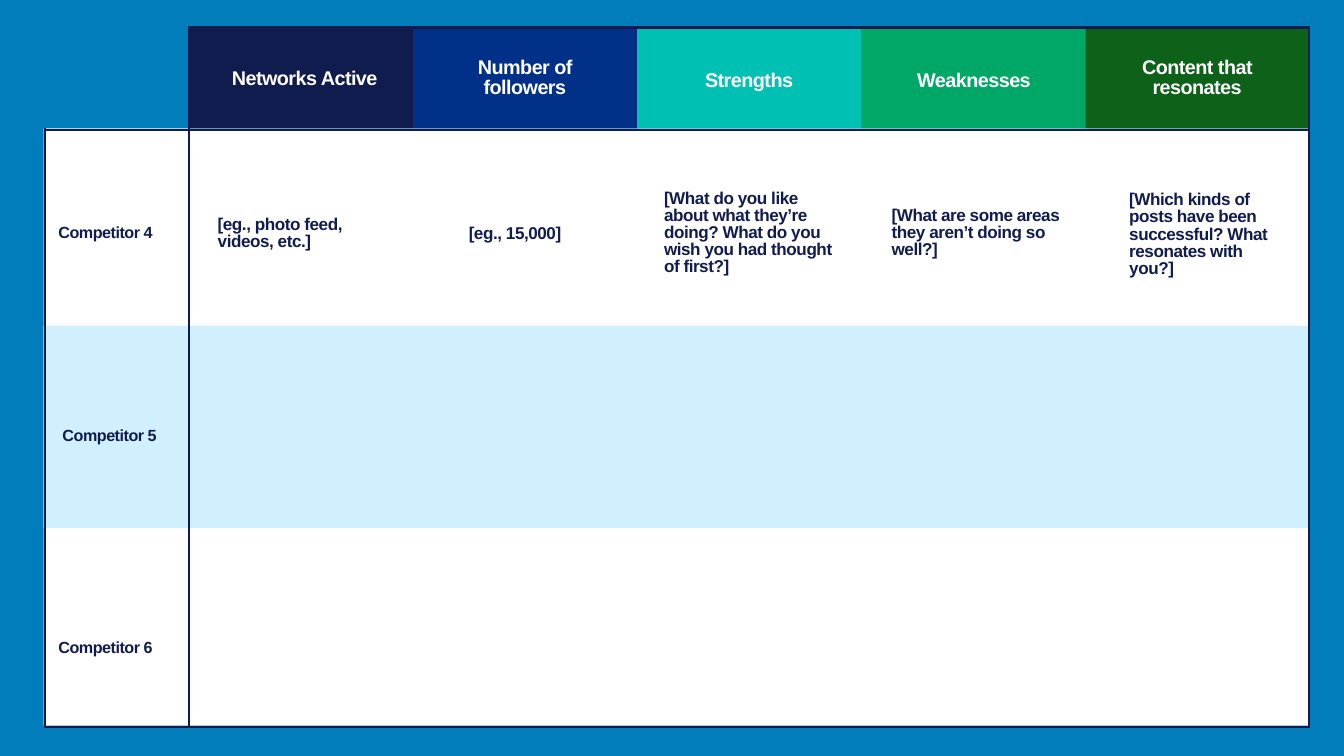
import collections
import pptx
import pptx.dml.color
import pptx.enum.shapes
import pptx.enum.text
import pptx.oxml.ns
import pptx.util
import lxml.etree

RGBColor = pptx.dml.color.RGBColor
BLUE = RGBColor(0x00, 0x7D, 0xBA)
WHITE = RGBColor(0xFF, 0xFF, 0xFF)
PALE_BLUE = RGBColor(0xD0, 0xF0, 0xFF)
NAVY = RGBColor(0x11, 0x1C, 0x4E)
ROYAL = RGBColor(0x00, 0x30, 0x87)
TEAL = RGBColor(0x00, 0xBF, 0xB3)
GREEN = RGBColor(0x00, 0xA7, 0x66)
FOREST = RGBColor(0x0D, 0x61, 0x18)

LEFT = pptx.enum.text.PP_ALIGN.LEFT
CENTER = pptx.enum.text.PP_ALIGN.CENTER
EMU_PER_PX = 9144

Box = collections.namedtuple("Box", "left top width height")
Style = collections.namedtuple("Style", "size spacing tracking color")

HEADING = Style(21.2, 21.2, -60, WHITE)
LABEL = Style(17.3, 17.3, -50, NAVY)
NOTE = Style(18.3, 18.3, -50, NAVY)
NUMBER = NOTE._replace(spacing=21.6)

HEADINGS = [
    ("Networks Active", NAVY, Box(64, 65, 247, 29), LEFT),
    ("Number of followers", ROYAL, Box(83, 48, 167, 60), CENTER),
    ("Strengths", TEAL, Box(101, 68, 150, 29), LEFT),
    ("Weaknesses", GREEN, Box(83, 68, 198, 29), LEFT),
    ("Content that resonates", FOREST, Box(72, 48, 188, 60), CENTER),
]
COMPETITORS = [
    ("Competitor 4", Box(22, 144, 172, 24)),
    ("Competitor 5", Box(28, 447, 172, 24)),
    ("Competitor 6", Box(22, 762, 172, 24)),
]
NOTES = [
    ("[eg., photo feed, videos, etc.]", Box(43, 131, 247, 52), NOTE),
    ("[eg., 15,000]", Box(83, 141, 139, 60), NUMBER),
    ("[What do you like about what they’re doing? What do you wish you had thought of first?]",
     Box(40, 93, 254, 126), NOTE),
    ("[What are some areas they aren’t doing so well?]", Box(45, 118, 289, 76), NOTE),
    ("[Which kinds of posts have been successful? What resonates with you?]",
     Box(65, 95, 238, 126), NOTE),
]


def px(length):
    return pptx.util.Emu(round(length * EMU_PER_PX))


def set_attributes(target, values):
    for name, value in values.items():
        setattr(target, name, value)


def inside(outer, inner):
    return inner._replace(left=outer.left + inner.left, top=outer.top + inner.top)


def columns(box):
    width = box.width / len(HEADINGS)
    return [box._replace(left=box.left + index * width, width=width)
            for index in range(len(HEADINGS))]


def add_panel(slide, box, color):
    shape = slide.shapes.add_shape(
        pptx.enum.shapes.MSO_SHAPE.RECTANGLE, *map(px, box))
    shape.shadow.inherit = False
    shape.fill.solid()
    shape.fill.fore_color.rgb = color
    shape.line.fill.background()


def add_text(slide, box, text, style, alignment=LEFT):
    frame = slide.shapes.add_textbox(*map(px, box)).text_frame
    set_attributes(frame, {
        "word_wrap": True, "margin_left": 0, "margin_top": 0,
        "margin_right": 0, "margin_bottom": 0,
    })
    paragraph = frame.paragraphs[0]
    set_attributes(paragraph, {
        "alignment": alignment, "line_spacing": pptx.util.Pt(style.spacing),
    })
    run = paragraph.add_run()
    run.text = text
    set_attributes(run.font, {
        "name": "Arial", "size": pptx.util.Pt(style.size), "bold": True,
    })
    run.font.color.rgb = style.color
    run._r.get_or_add_rPr().set("spc", str(style.tracking))


def add_rule(slide, *ends):
    connector = slide.shapes.add_connector(
        pptx.enum.shapes.MSO_CONNECTOR.STRAIGHT, *map(px, ends))
    connector.line.color.rgb = NAVY
    connector.line.width = pptx.util.Pt(2.25)
    lxml.etree.SubElement(
        connector._element.spPr, pptx.oxml.ns.qn("a:effectLst"))


def add_background(slide, body, header):
    add_panel(slide, body, WHITE)
    add_panel(slide, inside(body, Box(0, 294, body.width, 301)), PALE_BLUE)
    add_rule(slide, header.left, body.top + body.height, header.left, header.top)


def add_header(slide, box):
    cells = columns(box)
    for cell, (_, color, _, _) in zip(cells, HEADINGS):
        add_panel(slide, cell, color)
    for cell, (text, _, place, alignment) in zip(cells, HEADINGS):
        add_text(slide, inside(cell, place), text, HEADING, alignment)


def add_body(slide, box, header):
    for text, place in COMPETITORS:
        add_text(slide, inside(box, place), text, LABEL)
    for column, (text, place, style) in zip(columns(header), NOTES):
        cell = column._replace(top=box.top)
        add_text(slide, inside(cell, place), text, style)


def add_borders(slide, body, header):
    right = body.left + body.width
    bottom = body.top + body.height
    add_rule(slide, right - 1, bottom + 2, right - 1, header.top)
    add_rule(slide, body.left + 2, bottom, body.left + 2, body.top)
    for left, top in ((body.left, bottom), (body.left, body.top),
                      (header.left, header.top)):
        add_rule(slide, right, top + 2, left, top + 2)


def main():
    presentation = pptx.Presentation()
    set_attributes(presentation, {"slide_width": px(2000), "slide_height": px(1125)})
    slide = presentation.slides.add_slide(presentation.slide_layouts[6])
    slide.background.fill.solid()
    slide.background.fill.fore_color.rgb = BLUE
    header = Box(281, 39, 1668, 152)
    body = Box(65, 191, 1884, 889)
    add_background(slide, body, header)
    add_header(slide, header)
    add_body(slide, body, header)
    add_borders(slide, body, header)
    presentation.save("out.pptx")


if __name__ == "__main__":
    main()
